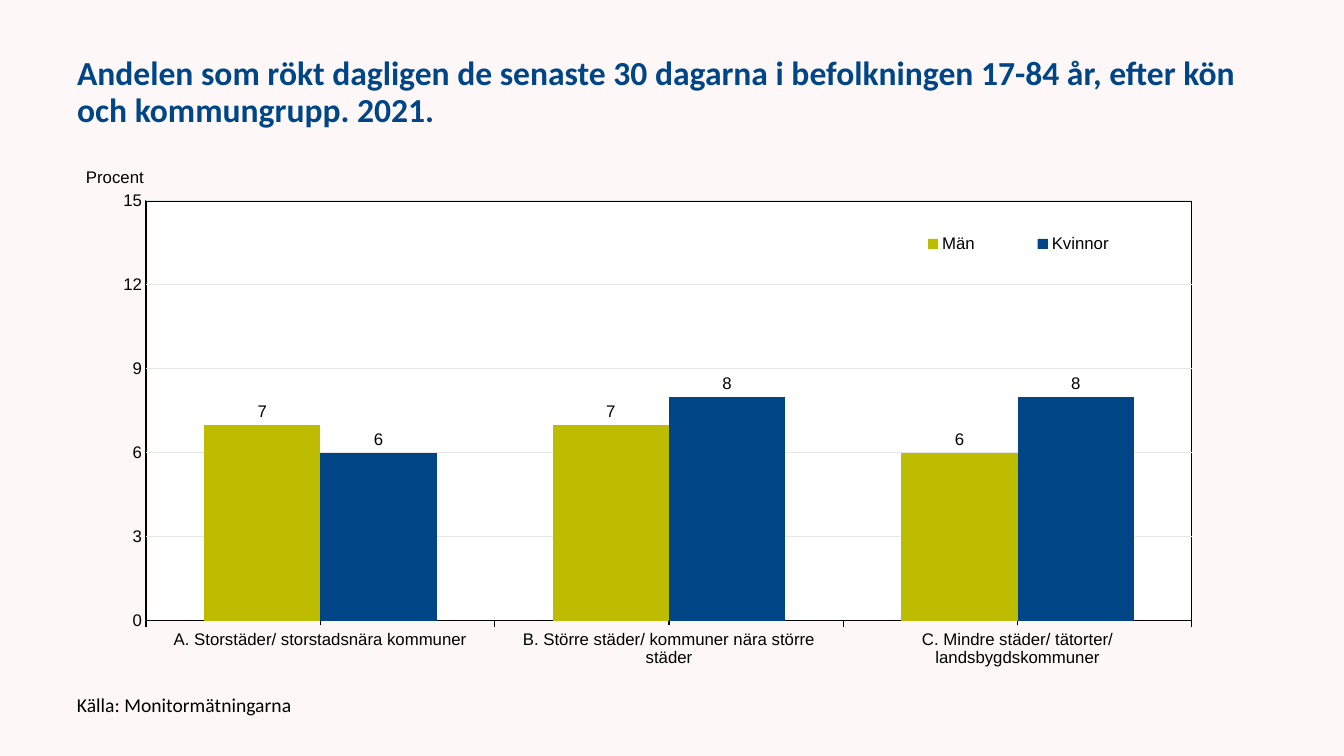
import lxml.etree
import pptx
import pptx.chart.data
import pptx.dml.color
import pptx.enum.chart
import pptx.enum.text
import pptx.oxml
import pptx.oxml.ns
import pptx.util

EMU_PER_PX = 914400 / 100.8
COLOURS = {"background": "FEF7F7", "men": "BEBC00", "women": "004687",
           "text": "000000", "grid": "E7E6E6", "plot": "FFFFFF"}
GROUPS = ["A. Storstäder/ storstadsnära kommuner",
          "B. Större städer/ kommuner nära större städer",
          "C. Mindre städer/ tätorter/ landsbygdskommuner"]
SERIES = [("Män", (7, 7, 6), "men"), ("Kvinnor", (6, 8, 8), "women")]


def px(length):
    """Turn a length in px into EMU."""
    return pptx.util.Emu(round(length * EMU_PER_PX))


def colour(name):
    """Look up a named colour."""
    return pptx.dml.color.RGBColor.from_string(COLOURS[name])


def set_font(font, family, size, name, bold=False):
    """Apply family, size, colour and weight to a font."""
    font.name, font.size, font.bold = family, pptx.util.Pt(size), bold
    font.color.rgb = colour(name)


def write(shape, box, text, size, name, bold=False):
    """Place a shape in its box and fill it with one left-aligned paragraph."""
    shape.left, shape.top, shape.width, shape.height = map(px, box)
    frame = shape.text_frame
    frame.word_wrap = True
    frame.vertical_anchor = pptx.enum.text.MSO_ANCHOR.MIDDLE
    frame.text = text
    paragraph = frame.paragraphs[0]
    paragraph.alignment = pptx.enum.text.PP_ALIGN.LEFT
    paragraph.line_spacing = 0.9
    set_font(paragraph.font, "Calibri", size, name, bold)


def set_layout(part, box, chart_box, inner=False):
    """Fix a chart part in a px box measured from the chart's corner."""
    for layout in part.xpath("c:layout"):
        part.remove(layout)
    target = '<c:layoutTarget val="inner"/>' if inner else ""
    modes = '<c:xMode val="edge"/><c:yMode val="edge"/>'
    sizes = "".join(f'<c:{tag} val="{length / whole:.4f}"/>'
                    for tag, length, whole in zip("xywh", box, chart_box[2:] * 2))
    layout = pptx.oxml.parse_xml(
        f'<c:layout {pptx.oxml.ns.nsdecls("c")}><c:manualLayout>'
        f'{target}{modes}{sizes}</c:manualLayout></c:layout>')
    overlay = part.xpath("c:overlay")
    part.insert(part.index(overlay[0]) if overlay else 0, layout)


def format_axes(chart):
    """Format the category axis, the percent axis and the gridlines."""
    marks = pptx.enum.chart.XL_TICK_MARK
    groups, percent = chart.category_axis, chart.value_axis
    groups.major_tick_mark = groups.minor_tick_mark = marks.OUTSIDE
    groups.format.line.color.rgb = colour("text")
    groups.format.line.width = pptx.util.Pt(0.75)
    groups.axis_title.text_frame.text = "Procent"
    set_font(groups.axis_title.text_frame.paragraphs[0].font, "Arial", 12, "text")
    percent.minimum_scale, percent.maximum_scale, percent.major_unit = 0, 15, 3
    percent.major_tick_mark = percent.minor_tick_mark = marks.NONE
    percent.format.line.fill.background()
    percent.tick_labels.number_format = "#,##0"
    percent.tick_labels.number_format_is_linked = False
    percent.major_gridlines.format.line.color.rgb = colour("grid")
    percent.major_gridlines.format.line.width = pptx.util.Pt(0.75)
    for axis in (groups, percent):
        set_font(axis.tick_labels.font, "Arial", 12, "text")


def format_columns(plot):
    """Colour the columns and label them with their values."""
    plot.gap_width, plot.overlap, plot.vary_by_categories = 100, 0, False
    for series, (_, _, name) in zip(plot.series, SERIES):
        series.format.fill.solid()
        series.format.fill.fore_color.rgb = colour(name)
        labels = series.data_labels
        labels.show_value = True
        labels.position = pptx.enum.chart.XL_LABEL_POSITION.OUTSIDE_END
        labels.number_format, labels.number_format_is_linked = "#,##0", False
        set_font(labels.font, "Arial", 12, "text")


def add_smoking_chart(slide, box):
    """Add the clustered columns for men and women per municipality group."""
    data = pptx.chart.data.CategoryChartData(number_format="#,##0")
    data.categories = GROUPS
    for label, values, _ in SERIES:
        data.add_series(label, values)
    chart = slide.shapes.add_chart(
        pptx.enum.chart.XL_CHART_TYPE.COLUMN_CLUSTERED, *map(px, box), data).chart
    chart.has_title = False
    set_font(chart.font, "Arial", 12, "text")
    format_axes(chart)
    format_columns(chart.plots[0])
    chart.has_legend = True
    chart.legend.position = pptx.enum.chart.XL_LEGEND_POSITION.BOTTOM
    chart.legend.include_in_layout = False
    set_font(chart.legend.font, "Arial", 12, "text")
    plot_area = chart.element.xpath("c:chart/c:plotArea")[0]
    set_layout(plot_area, (79, 45, 1046, 420), box, inner=True)
    set_layout(chart.element.xpath("c:chart/c:legend")[0], (804, 72, 295, 32), box)
    set_layout(chart.category_axis.axis_title.element, (16, 8), box)
    plot_area.append(pptx.oxml.parse_xml(
        f'<c:spPr {pptx.oxml.ns.nsdecls("c", "a")}>'
        f'<a:solidFill><a:srgbClr val="{COLOURS["plot"]}"/></a:solidFill>'
        f'<a:ln w="9525"><a:solidFill><a:srgbClr val="{COLOURS["text"]}"/>'
        '</a:solidFill></a:ln></c:spPr>'))


def build_chart_slide(presentation):
    """Build the slide with its title, chart and source line."""
    slide = presentation.slides.add_slide(presentation.slide_layouts[5])
    slide.background.fill.solid()
    slide.background.fill.fore_color.rgb = colour("background")
    write(slide.shapes.title, (67, 30, 1210, 126),
          "Andelen som rökt dagligen de senaste 30 dagarna i befolkningen "
          "17-84 år, efter kön och kommungrupp. 2021.", 24, "women", True)
    add_smoking_chart(slide, (67, 156, 1210, 532))
    source_box = (67, 688, 605, 37)
    write(slide.shapes.add_textbox(*map(px, source_box)), source_box,
          "Källa: Monitormätningarna", 14, "text")


def main():
    """Create and save the presentation."""
    presentation = pptx.Presentation()
    presentation.slide_width, presentation.slide_height = px(1344), px(756)
    build_chart_slide(presentation)
    presentation.save("out.pptx")


if __name__ == "__main__":
    main()
